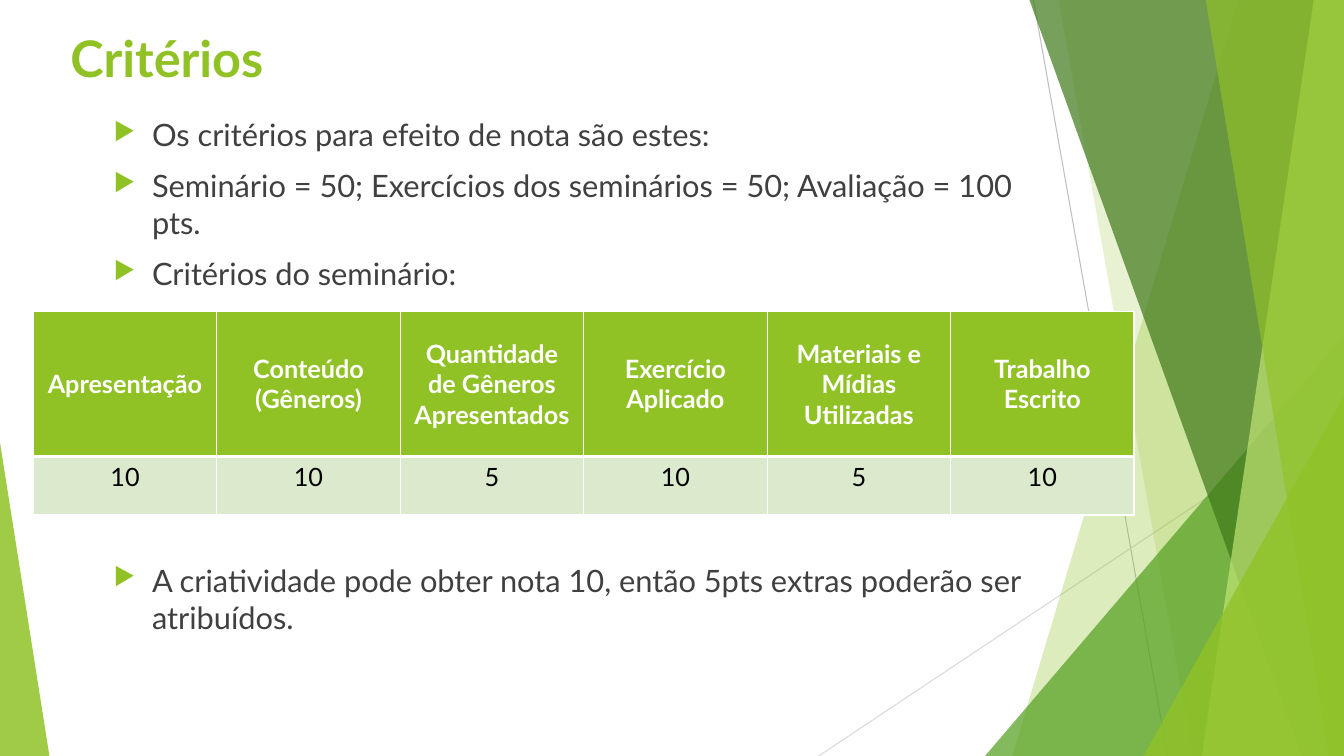
import pptx
import pptx.util
import pptx.dml.color
import pptx.enum.shapes
import pptx.enum.text
import pptx.oxml
import pptx.oxml.ns
import lxml.etree

Inches = pptx.util.Inches
Pt = pptx.util.Pt
qn = pptx.oxml.ns.qn
WIDE, HIGH = 13.33, 7.5
GREEN = "90C226"
FONT = "Lato"

LINES = [
    ((10.25, 0, 11.58, HIGH), "BFBFBF"),
    ((WIDE, 4.03, 8.12, HIGH), "D9D9D9"),
]
PANES = [
    ("band", (12.28, 10.04), GREEN, 30),
    ("band", (10.5, 11.83), GREEN, 20),
    ("wedge", (9.77, 3.33, 3.56, 4.17, 1), "54A021", 72),
    ("band", (10.21, 12.91), "3F7819", 70),
    ("band", (13.03, 11.92), "C0E474", 70),
    ("band", (11.96, 13.18), GREEN, 65),
    ("wedge", (11.34, 3.93, 1.99, 3.57, 1), GREEN, 80),
    ("wedge", (0, 4.39, 0.49, 3.11, 0), GREEN, 85),
]
POINTS = [
    "Os critérios para efeito de nota são estes:",
    "Seminário = 50; Exercícios dos seminários = 50; Avaliação = 100 pts.",
    "Critérios do seminário:",
]
EXTRA = ["A criatividade pode obter nota 10, então 5pts extras poderão ser atribuídos."]
GRADES = [
    ("Apresentação", "10"),
    ("Conteúdo (Gêneros)", "10"),
    ("Quantidade de Gêneros Apresentados", "5"),
    ("Exercício Aplicado", "10"),
    ("Materiais e Mídias Utilizadas", "5"),
    ("Trabalho Escrito", "10"),
]


def color(code):
    return pptx.dml.color.RGBColor.from_string(code)


def add(parent, tag, **attrs):
    node = lxml.etree.SubElement(parent, qn(tag))
    for key, val in attrs.items():
        node.set(key, str(val))
    return node


def paint(shape, code, alpha):
    shape.shadow.inherit = False
    shape.fill.solid()
    shape.fill.fore_color.rgb = color(code)
    tint = shape.fill._xPr.find(qn("a:solidFill"))[0]
    add(tint, "a:alpha", val=alpha * 1000)
    shape.line.fill.background()


def write(para, text, size, code, bold=False):
    run = para.add_run()
    run.text = text
    run.font.name = FONT
    run.font.size = Pt(size)
    run.font.bold = bold
    run.font.color.rgb = color(code)


def frame(slide, box):
    text = slide.shapes.add_textbox(*map(Inches, box)).text_frame
    text.word_wrap = True
    return text


def band(slide, top, foot):
    edge = [(WIDE, 0), (WIDE, HIGH), (foot, HIGH)]
    form = slide.shapes.build_freeform(Inches(top), 0)
    form.add_line_segments([(Inches(x), Inches(y)) for x, y in edge])
    return form.convert_to_shape()


def wedge(slide, left, top, wide, high, peak):
    kind = pptx.enum.shapes.MSO_SHAPE.ISOSCELES_TRIANGLE
    shape = slide.shapes.add_shape(kind, *map(Inches, (left, top, wide, high)))
    shape.adjustments[0] = peak
    return shape


def backdrop(slide):
    for ends, code in LINES:
        kind = pptx.enum.shapes.MSO_CONNECTOR.STRAIGHT
        line = slide.shapes.add_connector(kind, *map(Inches, ends))
        line.line.color.rgb = color(code)
        line.line.width = Pt(0.75)
        add(line._element.spPr, "a:effectLst")
    draw = {"band": band, "wedge": wedge}
    for kind, place, code, alpha in PANES:
        paint(draw[kind](slide, *place), code, alpha)


def title(slide, box):
    text = frame(slide, box)
    text.vertical_anchor = pptx.enum.text.MSO_ANCHOR.MIDDLE
    write(text.paragraphs[0], "Critérios", 36, GREEN, True)


def bullets(slide, box, items):
    text = frame(slide, box)
    for i, item in enumerate(items):
        para = text.add_paragraph() if i else text.paragraphs[0]
        if i:
            para.space_before = Pt(10)
        props = para._p.get_or_add_pPr()
        props.set("marL", str(Inches(0.38)))
        props.set("indent", str(-Inches(0.38)))
        add(add(props, "a:buClr"), "a:srgbClr", val=GREEN)
        add(props, "a:buSzPct", val=80000)
        add(props, "a:buChar", char="▶")
        write(para, item, 22, "404040")


def border(cell, sides):
    props = cell._tc.get_or_add_tcPr()
    for i, (side, width) in enumerate(sides.items()):
        edge = lxml.etree.Element(qn("a:ln" + side))
        edge.set("w", str(Pt(width)))
        add(add(edge, "a:solidFill"), "a:srgbClr", val="FFFFFF")
        props.insert(i, edge)


def grades(slide, box):
    left, top, wide, high = box
    grid = slide.shapes.add_table(2, len(GRADES), *map(Inches, box)).table
    head = 1.44
    grid.rows[0].height = Inches(head)
    grid.rows[1].height = Inches(high - head)
    anchor = pptx.enum.text.MSO_ANCHOR
    looks = [
        (GREEN, "FFFFFF", True, anchor.MIDDLE, {"L": 1, "R": 1, "T": 1, "B": 3}),
        ("DBE9CD", "000000", False, anchor.TOP, {"L": 1, "R": 1, "T": 3, "B": 1}),
    ]
    for col, pair in enumerate(GRADES):
        grid.columns[col].width = Inches(wide / len(GRADES))
        for row, (fill, ink, bold, place, sides) in enumerate(looks):
            cell = grid.cell(row, col)
            cell.fill.solid()
            cell.fill.fore_color.rgb = color(fill)
            cell.vertical_anchor = place
            para = cell.text_frame.paragraphs[0]
            para.alignment = pptx.enum.text.PP_ALIGN.CENTER
            write(para, pair[row], 18, ink, bold)
            border(cell, sides)


def main():
    deck = pptx.Presentation()
    deck.slide_width = Inches(WIDE)
    deck.slide_height = Inches(HIGH)
    slide = deck.slides.add_slide(deck.slide_layouts[6])
    backdrop(slide)
    title(slide, (0.6, 0.23, 3.57, 0.68))
    bullets(slide, (1.03, 1.1, 9.4, 1.9), POINTS)
    bullets(slide, (1.03, 5.52, 9.4, 1.23), EXTRA)
    grades(slide, (0.33, 3.09, 10.92, 2.02))
    deck.save("out.pptx")


if __name__ == "__main__":
    main()
